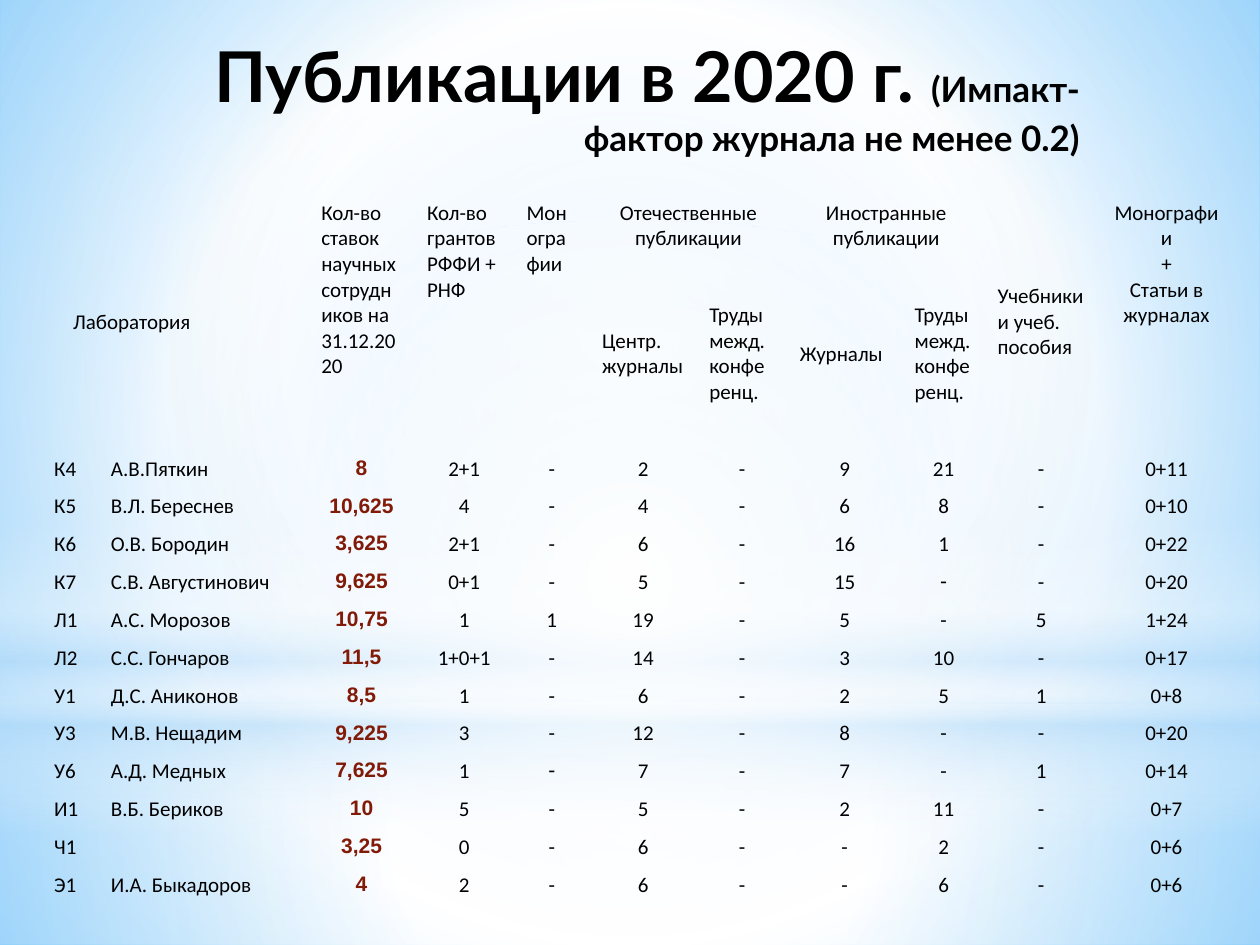
from lxml import etree
from pptx import Presentation
from pptx import util as u
from pptx.dml.color import RGBColor
from pptx.enum import shapes, text
from pptx.oxml.ns import qn

WIDTH, HEIGHT = 10, 7.5
COLORS = {
    "ink": "000000", "accent": "821A08", "white": "FFFFFF",
    "pale": "B4DCFA", "sky": "99D4FE", "azure": "54BDFF",
}
NO_GRID_STYLE = "{2D5ABB26-0587-4C30-8999-92F81FD0307C}"
LEFT, CENTER, RIGHT = text.PP_ALIGN.LEFT, text.PP_ALIGN.CENTER, text.PP_ALIGN.RIGHT
MIDDLE, TOP = text.MSO_ANCHOR.MIDDLE, text.MSO_ANCHOR.TOP

COLUMN_WIDTHS = [0.45, 1.67, 0.84, 0.79, 0.6, 0.85, 0.72, 0.91, 0.66, 0.89, 1.1]
HEADER_HEIGHTS = [0.51, 1.52]
ROW_HEIGHT = 0.3

# row, column, rows spanned, columns spanned, paragraphs, format
HEADERS = [
    (0, 0, 2, 2, ["Лаборатория"], dict(anchor=MIDDLE, inset=0.25)),
    (0, 2, 2, 1, ["Кол-во ставок научных сотрудников на 31.12.2020"], {}),
    (0, 3, 2, 1, ["Кол-во грантов", "РФФИ + РНФ"], {}),
    (0, 4, 2, 1, ["Монографии"], {}),
    (0, 5, 1, 2, ["Отечественные публикации"], dict(align=CENTER)),
    (0, 7, 1, 2, ["Иностранные публикации"], dict(align=CENTER)),
    (0, 9, 2, 1, ["Учебники и учеб. пособия"], dict(anchor=MIDDLE)),
    (0, 10, 2, 1, ["Монографии", "+", "Статьи в журналах"],
     dict(align=CENTER, inset=0.12)),
    (1, 5, 1, 1, ["Центр.", "журналы"], dict(anchor=MIDDLE)),
    (1, 6, 1, 1, ["Труды межд. конференц."], dict(anchor=MIDDLE)),
    (1, 7, 1, 1, ["Журналы"], dict(anchor=MIDDLE)),
    (1, 8, 1, 1, ["Труды межд. конференц."], dict(anchor=MIDDLE)),
]

LABORATORIES = [line.split("|") for line in (
    "К4|А.В.Пяткин|8|2+1|-|2|-|9|21|-|0+11",
    "К5|В.Л. Береснев|10,625|4|-|4|-|6|8|-|0+10",
    "К6|О.В. Бородин|3,625|2+1|-|6|-|16|1|-|0+22",
    "К7|С.В. Августинович|9,625|0+1|-|5|-|15|-|-|0+20",
    "Л1|А.С. Морозов|10,75|1|1|19|-|5|-|5|1+24",
    "Л2|С.С. Гончаров|11,5|1+0+1|-|14|-|3|10|-|0+17",
    "У1|Д.С. Аниконов|8,5|1|-|6|-|2|5|1|0+8",
    "У3|М.В. Нещадим|9,225|3|-|12|-|8|-|-|0+20",
    "У6|А.Д. Медных|7,625|1|-|7|-|7|-|1|0+14",
    "И1|В.Б. Бериков|10|5|-|5|-|2|11|-|0+7",
    "Ч1||3,25|0|-|6|-|-|2|-|0+6",
    "Э1|И.А. Быкадоров|4|2|-|6|-|-|6|-|0+6",
)]
ARIAL_DASHES = {("К7", 8), ("У6", 4)}


def add_text(para, words, *, size=12, font="Calibri", color="ink", bold=False,
             align=LEFT):
    """Add one formatted span to a paragraph."""
    para.alignment = align
    if not words:
        para._p.get_or_add_endParaRPr().set("sz", str(size * 100))
        return
    span = para.add_run()
    span.text = words
    span.font.size = u.Pt(size)
    span.font.name = font
    span.font.bold = bold
    span.font.color.rgb = RGBColor.from_string(COLORS[color])


def paint_gradient(fill, element, stops, angle=None):
    """Fill with (position, color, opacity) stops: linear, or circular without angle."""
    fill.gradient()
    gradient = element.find(".//" + qn("a:gradFill"))
    for child in list(gradient):
        gradient.remove(child)
    stop_list = etree.SubElement(gradient, qn("a:gsLst"))
    for position, color, opacity in stops:
        stop = etree.SubElement(stop_list, qn("a:gs"), pos=str(position * 1000))
        tone = etree.SubElement(stop, qn("a:srgbClr"), val=COLORS[color])
        if opacity < 100:
            etree.SubElement(tone, qn("a:alpha"), val=str(opacity * 1000))
    if angle is None:
        circle = etree.SubElement(gradient, qn("a:path"), {"path": "circle"})
        etree.SubElement(circle, qn("a:fillToRect"),
                         {side: "50000" for side in "ltrb"})
    else:
        etree.SubElement(gradient, qn("a:lin"), ang=str(angle * 60000), scaled="0")


class SlideBuilder:
    """Holds the deck and current slide; boxes are shares of the slide's size."""

    def __init__(self):
        self.deck = Presentation()
        self.deck.slide_width = u.Inches(WIDTH)
        self.deck.slide_height = u.Inches(HEIGHT)
        self.page = self.deck.slides.add_slide(self.deck.slide_layouts[6])

    def place(self, left, top, width, height):
        return (u.Inches(left * WIDTH), u.Inches(top * HEIGHT),
                u.Inches(width * WIDTH), u.Inches(height * HEIGHT))

    def background(self, stops):
        paint_gradient(self.page.background.fill, self.page.element, stops)

    def glow(self, kind, top, height, stops, angle=None):
        shape = self.page.shapes.add_shape(kind, *self.place(0, top, 1, height))
        shape.shadow.inherit = False
        shape.line.fill.background()
        paint_gradient(shape.fill, shape.element, stops, angle)

    def title(self, box, spans):
        frame = self.page.shapes.add_textbox(*self.place(*box)).text_frame
        frame.word_wrap = True
        frame.vertical_anchor = TOP
        for words, size in spans:
            add_text(frame.paragraphs[0], words, size=size, font="Lato",
                     bold=True, align=RIGHT)

    def table(self, left, top, widths, heights):
        box = self.place(left, top, sum(widths) / WIDTH, sum(heights) / HEIGHT)
        table = self.page.shapes.add_table(len(heights), len(widths), *box).table
        table.first_row = table.horz_banding = False
        table._tbl.tblPr.find(qn("a:tableStyleId")).text = NO_GRID_STYLE
        for column, width in zip(table.columns, widths):
            column.width = u.Inches(width)
        for row, height in zip(table.rows, heights):
            row.height = u.Inches(height)
        for cell in table.iter_cells():
            cell.fill.background()
        return table

    def cell(self, cell, paragraphs, *, anchor=TOP, inset=0.1, **style):
        cell.vertical_anchor = anchor
        cell.margin_left = u.Inches(inset)
        cell.margin_right = u.Inches(min(inset, 0.12))
        frame = cell.text_frame
        for index, words in enumerate(paragraphs):
            para = frame.add_paragraph() if index else frame.paragraphs[0]
            add_text(para, words, **style)


def main():
    builder = SlideBuilder()
    rectangle, oval = shapes.MSO_SHAPE.RECTANGLE, shapes.MSO_SHAPE.OVAL

    # Backdrop: sky gradient with a horizon and soft glows
    horizon = 5.58 / HEIGHT
    builder.background([(0, "sky", 100), (60, "white", 100), (100, "azure", 100)])
    builder.glow(rectangle, horizon, 1 - horizon,
                 [(0, "white", 90), (37, "white", 75), (100, "pale", 78)])
    builder.glow(rectangle, 0, horizon,
                 [(0, "white", 87), (48, "white", 61), (100, "pale", 78)])
    builder.glow(rectangle, 0.55, 1 / 3,
                 [(0, "white", 0), (29, "white", 29), (45, "pale", 40),
                  (55, "white", 25), (65, "pale", 60), (100, "white", 0)], angle=90)
    builder.glow(oval, 1.75 / HEIGHT, horizon,
                 [(0, "white", 100), (56, "white", 0), (100, "white", 0)])

    # Title
    builder.title((0.135, 0.21 / HEIGHT, 0.732, 1.33 / HEIGHT),
                  [("Публикации в 2020 г. ", 40),
                   ("(Импакт-фактор журнала не менее 0.2)", 20)])

    # Table header
    heights = HEADER_HEIGHTS + [ROW_HEIGHT] * len(LABORATORIES)
    table = builder.table(0.033, 1.54 / HEIGHT, COLUMN_WIDTHS, heights)
    for row, column, tall, wide, paragraphs, style in HEADERS:
        cell = table.cell(row, column)
        if tall * wide > 1:
            cell.merge(table.cell(row + tall - 1, column + wide - 1))
        builder.cell(cell, paragraphs, **style)

    # Table body: staff numbers stand out in the third column
    for row, values in enumerate(LABORATORIES, len(HEADER_HEIGHTS)):
        for column, value in enumerate(values):
            style = dict(align=CENTER if column > 1 else LEFT)
            if column == 2:
                style.update(font="Arial", color="accent", bold=True)
            elif (values[0], column) in ARIAL_DASHES:
                style.update(font="Arial")
            builder.cell(table.cell(row, column), [value], **style)

    builder.deck.save("out.pptx")


if __name__ == "__main__":
    main()
